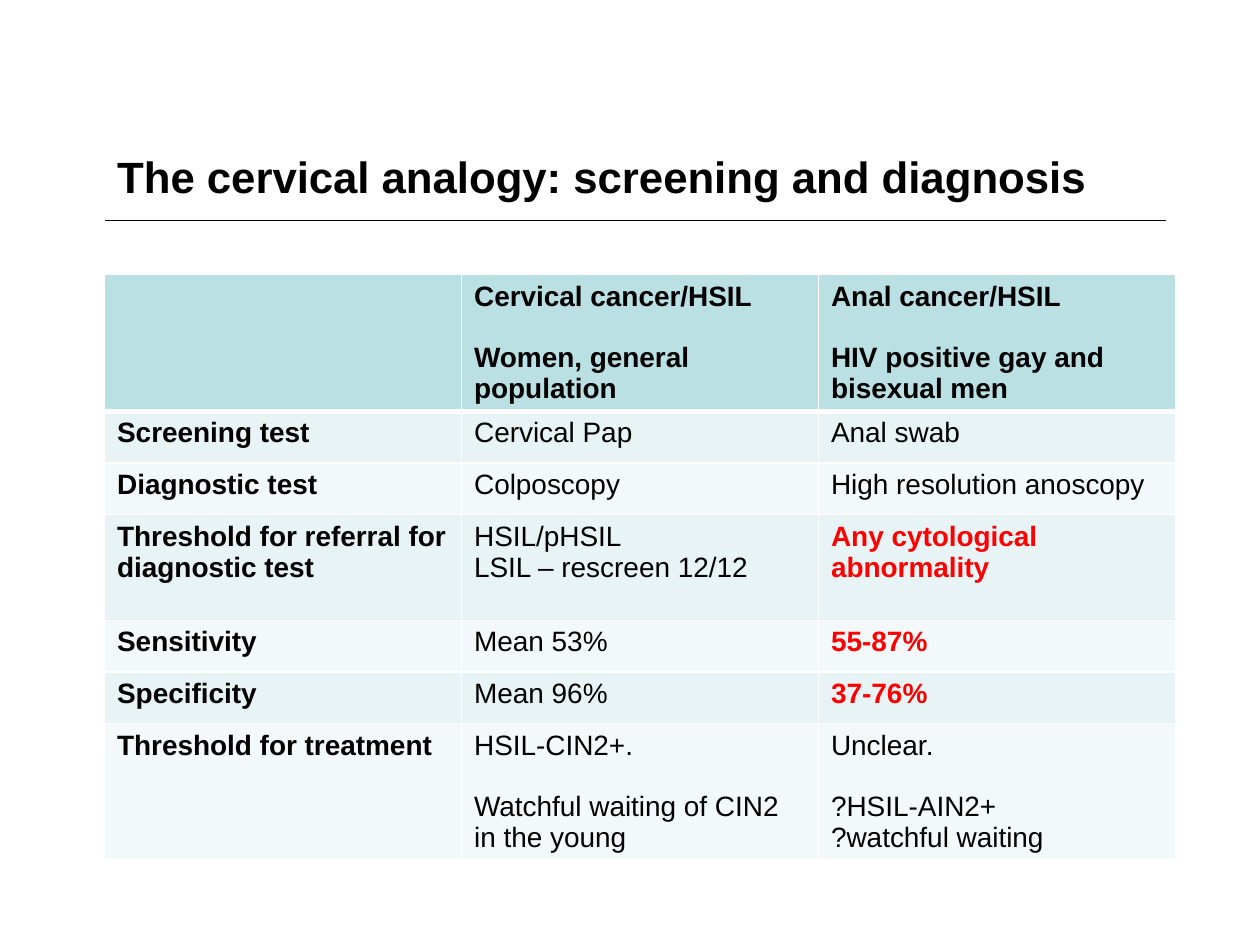
from lxml import etree
from pptx import Presentation
from pptx.dml.color import RGBColor
from pptx.enum.shapes import MSO_CONNECTOR
from pptx.enum.text import MSO_ANCHOR, PP_ALIGN
from pptx.oxml.ns import qn
from pptx.util import Inches, Pt

STRAIGHT = MSO_CONNECTOR.STRAIGHT
MIDDLE = MSO_ANCHOR.MIDDLE
LEFT = PP_ALIGN.LEFT

BLACK = RGBColor(0x00, 0x00, 0x00)
WHITE = RGBColor(0xFF, 0xFF, 0xFF)
RED = RGBColor(0xFF, 0x00, 0x00)
HEADER = RGBColor(0xBB, 0xE0, 0xE3)
BANDS = (RGBColor(0xF3, 0xF9, 0xFA), RGBColor(0xE7, 0xF3, 0xF4))

FONT = "Arial"
GAP = Pt(17.5)
MARGIN = 0.83
WIDTH = 8.5

ROWS = [
    ("",
     "Cervical cancer/HSIL\n\nWomen, general population",
     "Anal cancer/HSIL\n\nHIV positive gay and bisexual men"),
    ("Screening test", "Cervical Pap", "Anal swab"),
    ("Diagnostic test", "Colposcopy", "High resolution anoscopy"),
    ("Threshold for referral for diagnostic test",
     "HSIL/pHSIL\nLSIL – rescreen 12/12",
     "Any cytological abnormality"),
    ("Sensitivity", "Mean 53%", "55-87%"),
    ("Specificity", "Mean 96%", "37-76%"),
    ("Threshold for treatment",
     "HSIL-CIN2+.\n\nWatchful waiting of CIN2\nin the young",
     "Unclear.\n\n?HSIL-AIN2+\n?watchful waiting"),
]
HEIGHTS = [1.08, 0.41, 0.41, 0.84, 0.41, 0.41, 1.08]
RED_ROWS = {3, 4, 5}


def set_font(p, size, bold, color):
    p.font.name = FONT
    p.font.size = Pt(size)
    p.font.bold = bold
    p.font.color.rgb = color


def add_title(slide, text):
    sp = slide.shapes.title
    sp.left, sp.top = Inches(MARGIN), Inches(1.11)
    sp.width, sp.height = Inches(WIDTH), Inches(0.67)
    tf = sp.text_frame
    tf.text = text
    tf.vertical_anchor = MIDDLE
    tf.margin_bottom = Inches(0.15)
    p = tf.paragraphs[0]
    p.alignment = LEFT
    set_font(p, 25, True, BLACK)


def add_rule(slide, y):
    line = slide.shapes.add_connector(
        STRAIGHT, Inches(MARGIN), Inches(y), Inches(9.25), Inches(y))
    line.line.color.rgb = BLACK
    line.line.width = Pt(0.75)
    etree.SubElement(line._element.spPr, qn("a:effectLst"))


def add_border(cell, side, width):
    ln = etree.SubElement(
        cell._tc.get_or_add_tcPr(), qn(f"a:ln{side}"), w=str(Pt(width)))
    fill = etree.SubElement(ln, qn("a:solidFill"))
    etree.SubElement(fill, qn("a:srgbClr"), val=str(WHITE))


def fill_text(cell, text, bold, color):
    tf = cell.text_frame
    for i, block in enumerate(text.split("\n\n")):
        for j, line in enumerate(block.split("\n")):
            p = tf.paragraphs[0] if i == j == 0 else tf.add_paragraph()
            p.text = line
            if i and j == 0:
                p.space_before = GAP
            set_font(p, 16, bold, color)


def format_cell(cell, row, col, text):
    thick = {(0, "B"), (1, "T")}
    for side in "LRTB":
        add_border(cell, side, 3 if (row, side) in thick else 1)
    cell.fill.solid()
    cell.fill.fore_color.rgb = BANDS[row % 2] if row else HEADER
    red = col == 2 and row in RED_ROWS
    fill_text(cell, text, row == 0 or col == 0 or red, RED if red else BLACK)


def add_comparison_table(slide):
    table = slide.shapes.add_table(
        len(ROWS), len(ROWS[0]), Inches(MARGIN), Inches(2.18),
        Inches(WIDTH), Inches(sum(HEIGHTS))).table
    for row, (texts, height) in enumerate(zip(ROWS, HEIGHTS)):
        table.rows[row].height = Inches(height)
        for col, text in enumerate(texts):
            format_cell(table.cell(row, col), row, col, text)


def main():
    prs = Presentation()
    prs.slide_width, prs.slide_height = Inches(10), Inches(7.5)
    slide = prs.slides.add_slide(prs.slide_layouts[5])
    add_rule(slide, 1.75)
    add_title(slide, "The cervical analogy: screening and diagnosis")
    add_comparison_table(slide)
    prs.save("out.pptx")


if __name__ == "__main__":
    main()
